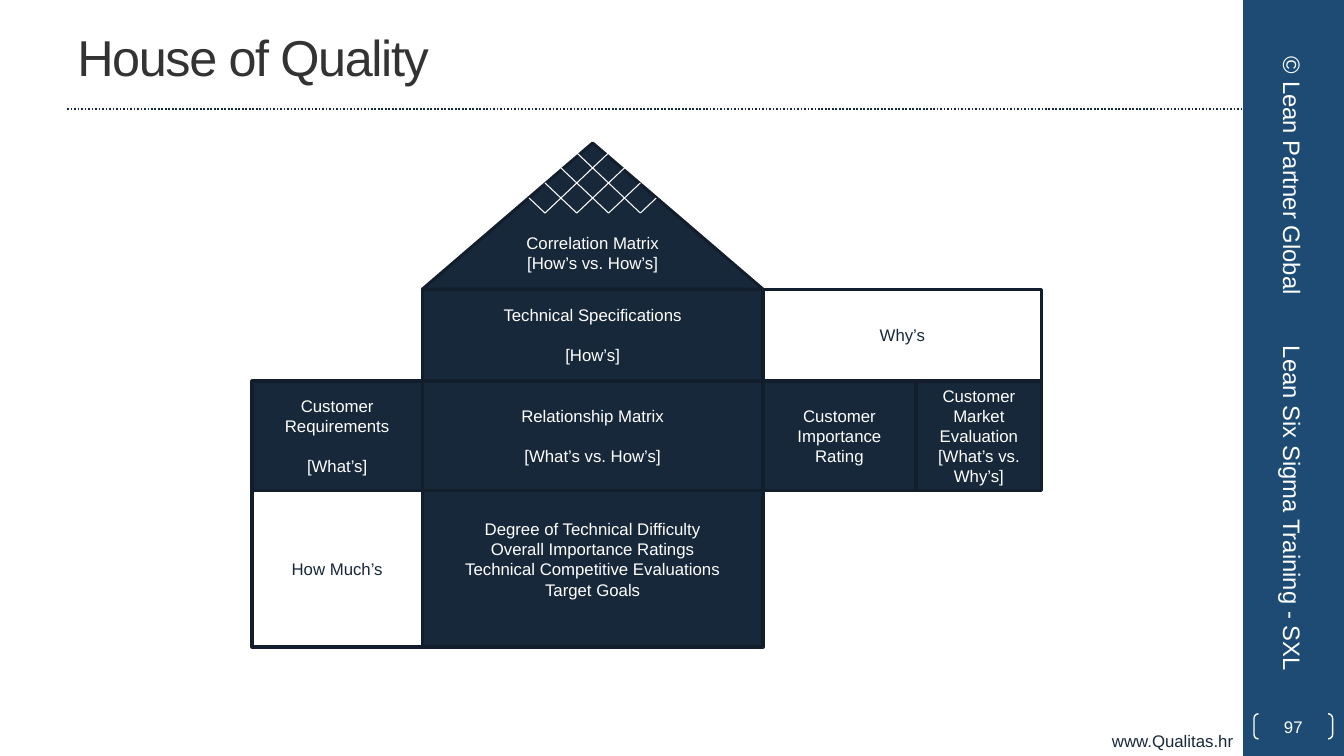
from lxml import etree
from pptx import Presentation
from pptx.dml.color import RGBColor
from pptx.enum import dml, shapes, text
from pptx.oxml.ns import qn
from pptx.util import Pt

COLORS = {"navy": "18283B", "edge": "121E2C", "rule": "17273B",
          "band": "1D4B74", "white": "FFFFFF", "title": "333333"}
FONT = "Arial"
BLANK_LINE = 14

TITLE = "House of Quality"
WEBSITE = "www.Qualitas.hr"
PAGE_NUMBER = "97"
# Sidebar text: words, centre y, length, alignment
SIDEBAR = [
    ("© Lean Partner Global", 125.6, 228, text.PP_ALIGN.CENTER),
    ("Lean Six Sigma Training - SXL", 372, 264, text.PP_ALIGN.LEFT),
]

# Edges of the house grid
COLUMNS = [180, 301.7, 545, 654.3, 744.2]
ROWS = [102.2, 206.6, 272.2, 350.6, 462.2]
# Room: first column, last column, row, fill, paragraphs, space between, space below
ROOMS = [
    (1, 2, 0, "navy", ["Correlation Matrix [How’s vs. How’s]"], 0, 0),
    (1, 2, 1, "navy", ["Technical Specifications", "[How’s]"], BLANK_LINE, 0),
    (1, 2, 2, "navy", ["Relationship Matrix", "[What’s vs. How’s]"], BLANK_LINE, 0),
    (1, 2, 3, "navy", ["Degree of Technical Difficulty", "Overall Importance Ratings",
                       "Technical Competitive Evaluations", "Target Goals"], 0, BLANK_LINE),
    (0, 1, 2, "navy", ["Customer Requirements", "[What’s]"], BLANK_LINE, 0),
    (0, 1, 3, "white", ["How Much’s"], 0, 0),
    (2, 4, 1, "white", ["Why’s"], 0, 0),
    (2, 3, 2, "navy", ["Customer Importance Rating"], 0, 0),
    (3, 4, 2, "navy", ["Customer Market Evaluation", "[What’s vs. Why’s]"], 0, 0),
]
# Roof lattice
LATTICE_BASE = 152.2
LATTICE_COUNT = 4
CELL_WIDTH, CELL_RISE = 22.7, 10.75

presentation = Presentation()
presentation.slide_width, presentation.slide_height = Pt(960), Pt(540)
slide = presentation.slides.add_slide(presentation.slide_layouts[5])


def color(name):
    return RGBColor.from_string(COLORS[name])


def write(shape, lines, size, font_color, alignment, gap=0,
          anchor=text.MSO_ANCHOR.MIDDLE):
    frame = shape.text_frame
    frame.word_wrap = True
    frame.vertical_anchor = anchor
    frame.text = "\n".join(lines)
    for index, paragraph in enumerate(frame.paragraphs):
        paragraph.alignment = alignment
        if index and gap:
            paragraph.space_before = Pt(gap)
        paragraph.font.name = FONT
        paragraph.font.size = Pt(size)
        paragraph.font.color.rgb = color(font_color)
    return frame


def add_shape(kind, left, top, width, height, fill=None, line=None, line_width=1):
    shape = slide.shapes.add_shape(kind, Pt(left), Pt(top), Pt(width), Pt(height))
    shape.shadow.inherit = False
    if fill:
        shape.fill.solid()
        shape.fill.fore_color.rgb = color(fill)
    else:
        shape.fill.background()
    if line:
        shape.line.color.rgb = color(line)
        shape.line.width = Pt(line_width)
    else:
        shape.line.fill.background()
    return shape


def add_line(x1, y1, x2, y2, line, width):
    connector = slide.shapes.add_connector(
        shapes.MSO_CONNECTOR.STRAIGHT, Pt(x1), Pt(y1), Pt(x2), Pt(y2))
    connector.line.color.rgb = color(line)
    connector.line.width = Pt(width)
    etree.SubElement(connector._element.spPr, qn("a:effectLst"))
    return connector


# Sidebar band, website and title rule
add_shape(shapes.MSO_SHAPE.RECTANGLE, 888, 0, 72, 540, "band")
website = slide.shapes.add_textbox(0, Pt(518.4), Pt(888), Pt(21.6))
write(website, [WEBSITE], 12, "navy", text.PP_ALIGN.RIGHT, anchor=text.MSO_ANCHOR.TOP)
title_rule = add_line(48, 77.8, 888, 77.8, "rule", 1.25)
title_rule.line.dash_style = dml.MSO_LINE.ROUND_DOT

# Title
title = slide.shapes.title
title.left, title.top, title.width, title.height = Pt(48), Pt(2.2), Pt(800), Pt(75.6)
frame = write(title, [TITLE], 36, "title", text.PP_ALIGN.LEFT)
frame.paragraphs[0].runs[0].font._element.set("spc", "-100")

# Page number and sidebar text
page = add_shape(shapes.MSO_SHAPE.DOUBLE_BRACKET, 895.7, 509.8, 56.2, 18, None, "white")
page.adjustments[0] = 0.18
frame = write(page, [PAGE_NUMBER], 12, "white", text.PP_ALIGN.CENTER)
frame.margin_left = frame.margin_right = frame.margin_top = frame.margin_bottom = 0
for words, middle, length, alignment in SIDEBAR:
    label = slide.shapes.add_textbox(
        Pt(923.3 - length / 2), Pt(middle - 19), Pt(length), Pt(38))
    label.rotation = 90
    write(label, [words], 17, "white", alignment)

# Rooms of the house, with the roof in the first row
for first, last, row, fill, lines, gap, below in ROOMS:
    kind = shapes.MSO_SHAPE.RECTANGLE if row else shapes.MSO_SHAPE.ISOSCELES_TRIANGLE
    room = add_shape(kind, COLUMNS[first], ROWS[row], COLUMNS[last] - COLUMNS[first],
                     ROWS[row + 1] - ROWS[row], fill, "edge", 2.25)
    font_color = "white" if fill == "navy" else "navy"
    frame = write(room, lines, 12, font_color, text.PP_ALIGN.CENTER, gap)
    frame.margin_bottom = Pt(3.6 + below)

# Lattice: mirrored diagonals from the base up to the roof edges
apex = (COLUMNS[1] + COLUMNS[2]) / 2
for side in (-1, 1):
    for step in range(LATTICE_COUNT):
        remaining = LATTICE_COUNT - step
        start = apex + side * CELL_WIDTH * (1.5 - step)
        end = start - side * CELL_WIDTH / 2 * remaining
        add_line(start, LATTICE_BASE, end, LATTICE_BASE - CELL_RISE * remaining,
                 "white", 0.75)

presentation.save("out.pptx")
